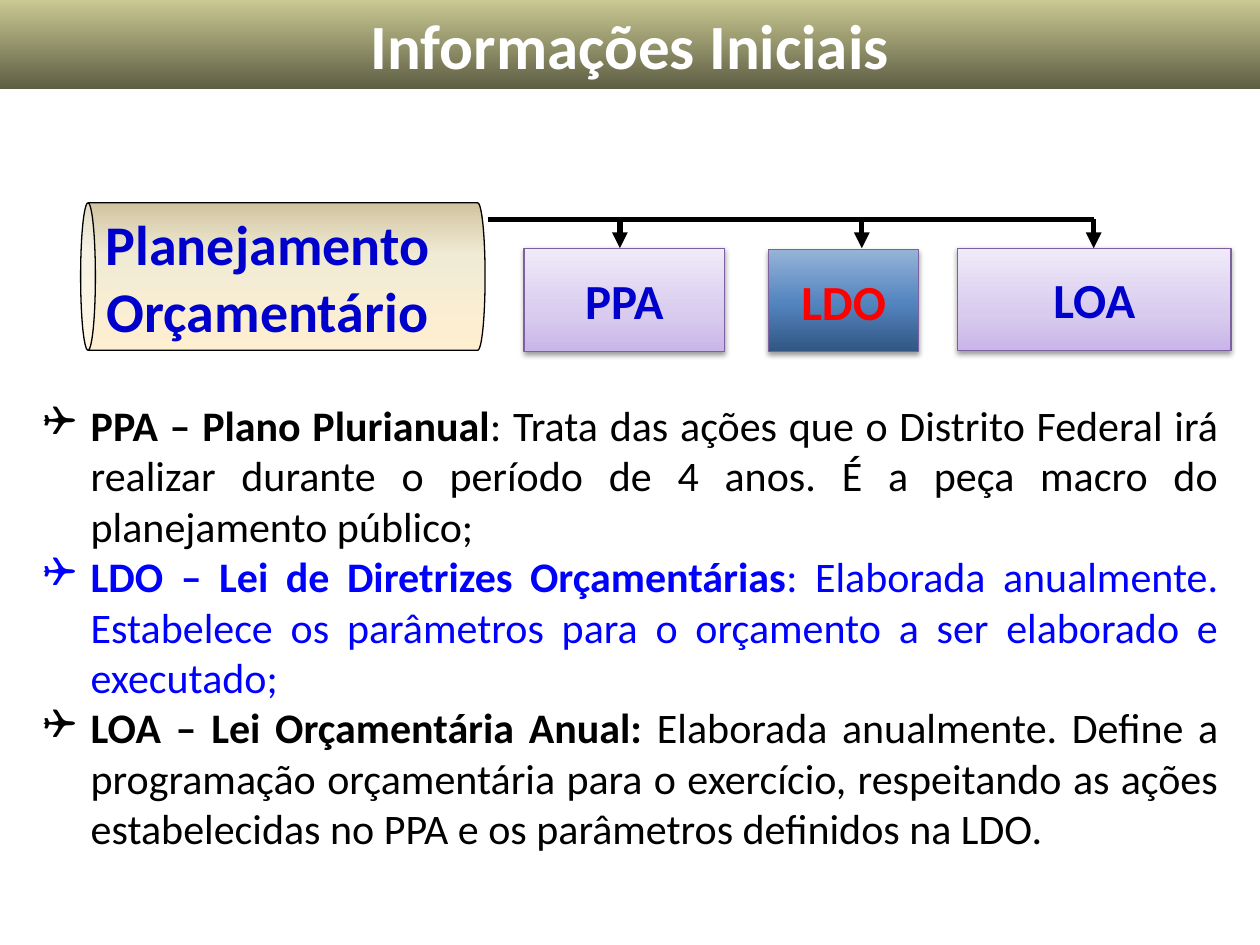
from lxml import etree
from pptx import Presentation
from pptx.dml.color import RGBColor
from pptx.enum.shapes import MSO_CONNECTOR, MSO_SHAPE
from pptx.enum.text import MSO_ANCHOR, MSO_AUTO_SIZE, PP_ALIGN
from pptx.oxml.ns import qn
from pptx.util import Inches, Pt

RECT, CAN = MSO_SHAPE.RECTANGLE, MSO_SHAPE.CAN
STRAIGHT = MSO_CONNECTOR.STRAIGHT
MIDDLE, TOP = MSO_ANCHOR.MIDDLE, MSO_ANCHOR.TOP
CENTER, JUSTIFY = PP_ALIGN.CENTER, PP_ALIGN.JUSTIFY
NO_FIT = MSO_AUTO_SIZE.NONE

# Content
TITLE = "Informações Iniciais"
ROOT = "Planejamento Orçamentário"
# label, (left, top, width, height), arrow x, gradient, text colour
BOXES = [
    ("PPA", (4.16, 1.97, 1.59, 0.82), 4.92, "lilac", "navy"),
    ("LDO", (6.10, 1.98, 1.19, 0.81), 6.84, "steel", "red"),
    ("LOA", (7.60, 1.97, 2.17, 0.81), 8.68, "lilac", "navy"),
]
# bold term, definition, colour
DEFINITIONS = [
    ("PPA – Plano Plurianual",
     ": Trata das ações que o Distrito Federal irá realizar durante o período "
     "de 4 anos. É a peça macro do planejamento público;", "black"),
    ("LDO – Lei de Diretrizes Orçamentárias",
     ": Elaborada anualmente. Estabelece os parâmetros para o orçamento a ser "
     "elaborado e executado;", "blue"),
    ("LOA – Lei Orçamentária Anual: ",
     "Elaborada anualmente. Define a programação orçamentária para o exercício, "
     "respeitando as ações estabelecidas no PPA e os parâmetros definidos na LDO.",
     "black"),
]

THEME = {
    "font": "Calibri",
    "size": {"title": 36, "root": 32, "box": 28, "body": 24},
    "color": {"white": "FFFFFF", "black": "000000", "blue": "0000FF",
              "navy": "0000CC", "red": "FF0000", "border": "7D60A0"},
    # angle in degrees clockwise, then (position %, colour) stops
    "gradient": {
        "olive": (90, [(0, "CAC992"), (100, "5D5D44")]),
        "sand": (0, [(0, "FFEFD1"), (65, "F0EBD5"), (100, "D1C39F")]),
        "steel": (270, [(0, "315683"), (48, "5485BF"), (100, "95B3D7")]),
        "lilac": (270, [(0, "C9B5E8"), (35, "D8CBEE"), (100, "F0EAF9")]),
    },
}
BUS_LEFT, BUS_Y, ARROW_END = 3.87, 1.74, 1.97
INDENT = 0.38


def rgb(name):
    return RGBColor.from_string(THEME["color"][name])


def add_xml(parent, tag, **attrs):
    el = etree.SubElement(parent, qn(tag))
    for key, value in attrs.items():
        el.set(key, str(value))
    return el


def place(sp, box):
    for name, value in zip(("left", "top", "width", "height"), box):
        setattr(sp, name, Inches(value))


def set_gradient(sp, name):
    angle, stops = THEME["gradient"][name]
    sp.fill.gradient()
    grad = sp._element.spPr.find(qn("a:gradFill"))
    for child in list(grad):
        grad.remove(child)
    stop_list = add_xml(grad, "a:gsLst")
    for pos, color in stops:
        gs = add_xml(stop_list, "a:gs", pos=pos * 1000)
        add_xml(gs, "a:srgbClr", val=color)
    add_xml(grad, "a:lin", ang=angle * 60000, scaled=0)


def add_run(p, text, size, color, bold=True):
    r = p.add_run()
    r.text = text
    fmt = {"name": THEME["font"], "size": Pt(THEME["size"][size]), "bold": bold}
    for key, value in fmt.items():
        setattr(r.font, key, value)
    r.font.color.rgb = rgb(color)


def set_label(sp, text, size, color):
    tf = sp.text_frame
    for key, value in {"word_wrap": True, "auto_size": NO_FIT,
                       "vertical_anchor": MIDDLE}.items():
        setattr(tf, key, value)
    p = tf.paragraphs[0]
    p.alignment = CENTER
    add_run(p, text, size, color)


def add_block(slide, kind, box, gradient, border):
    sp = slide.shapes.add_shape(kind, *map(Inches, box))
    set_gradient(sp, gradient)
    sp.line.color.rgb = rgb(border)
    sp.line.width = Pt(0.75)
    sp.shadow.inherit = False
    return sp


def add_shadow(sp):
    effects = sp._element.spPr.find(qn("a:effectLst"))
    shadow = add_xml(effects, "a:outerShdw", blurRad=Pt(3.1), dist=Pt(1.6),
                     dir=90 * 60000, rotWithShape=0)
    color = add_xml(shadow, "a:srgbClr", val=THEME["color"]["black"])
    add_xml(color, "a:alpha", val=38000)


def add_line(slide, x1, y1, x2, y2, arrow=False):
    line = slide.shapes.add_connector(STRAIGHT, *map(Inches, (x1, y1, x2, y2)))
    line.line.color.rgb = rgb("black")
    line.line.width = Pt(3)
    if arrow:
        add_xml(line.line._get_or_add_ln(), "a:tailEnd", type="triangle")
    add_xml(line._element.spPr, "a:effectLst")


def fill_definitions(body):
    tf = body.text_frame
    for key, value in {"word_wrap": True, "auto_size": NO_FIT,
                       "vertical_anchor": TOP}.items():
        setattr(tf, key, value)
    for i, (term, text, color) in enumerate(DEFINITIONS):
        p = tf.add_paragraph() if i else tf.paragraphs[0]
        p.alignment = JUSTIFY
        p.space_before = Pt(0)
        pPr = p._p.get_or_add_pPr()
        pPr.set("marL", str(Inches(INDENT)))
        pPr.set("indent", str(Inches(-INDENT)))
        add_xml(pPr, "a:buFont", typeface="Wingdings")
        add_xml(pPr, "a:buChar", char="❑")
        add_run(p, term, "body", color)
        add_run(p, text, "body", color, bold=False)


def main():
    prs = Presentation()
    prs.slide_width, prs.slide_height = Inches(10), Inches(7.5)
    slide = prs.slides.add_slide(prs.slide_layouts[1])

    # Title band
    title = slide.shapes.title
    place(title, (0, 0, 10, 0.71))
    set_gradient(title, "olive")
    set_label(title, TITLE, "title", "white")

    # Definitions
    body = slide.placeholders[1]
    place(body, (0.24, 3.12, 9.53, 3.74))
    fill_definitions(body)

    # Root cylinder, lying on its side with upright text
    can = add_block(slide, CAN, (1.66, 0.59, 1.17, 3.21), "sand", "black")
    can.rotation = 270
    can.adjustments[0] = 0.1
    set_label(can, ROOT, "root", "navy")
    tf = can.text_frame
    for side, inset in {"left": 0.08, "top": 0.08, "right": 0.08, "bottom": 0}.items():
        setattr(tf, f"margin_{side}", Inches(inset))
    tf._txBody.bodyPr.set("vert", "eaVert")

    # Bus line, arrows and boxes
    add_line(slide, BUS_LEFT, BUS_Y, BOXES[-1][2], BUS_Y)
    for label, box, arrow_x, gradient, color in BOXES:
        add_line(slide, arrow_x, BUS_Y, arrow_x, ARROW_END, arrow=True)
        sp = add_block(slide, RECT, box, gradient, "border")
        add_shadow(sp)
        set_label(sp, label, "box", color)

    prs.save("out.pptx")


if __name__ == "__main__":
    main()
